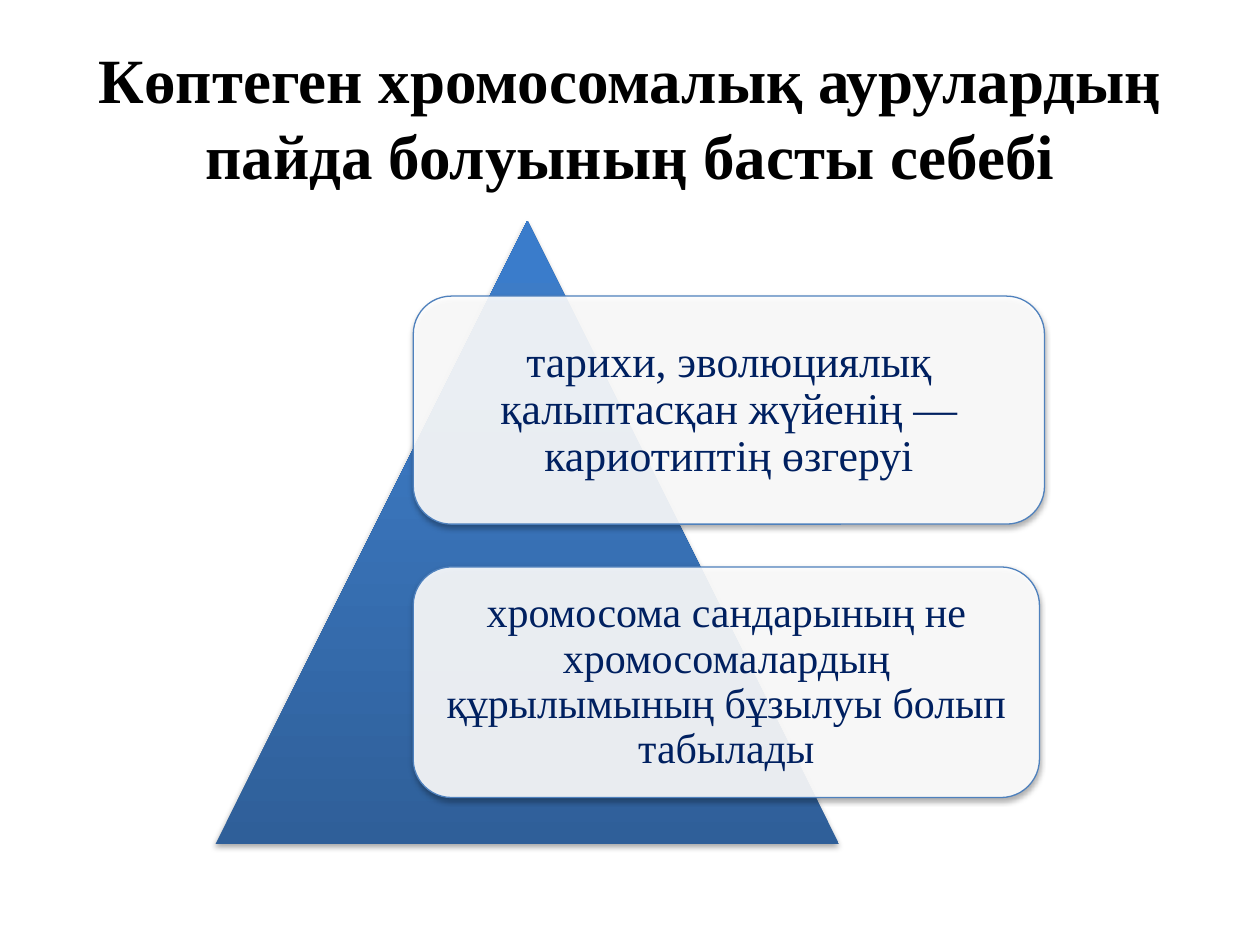
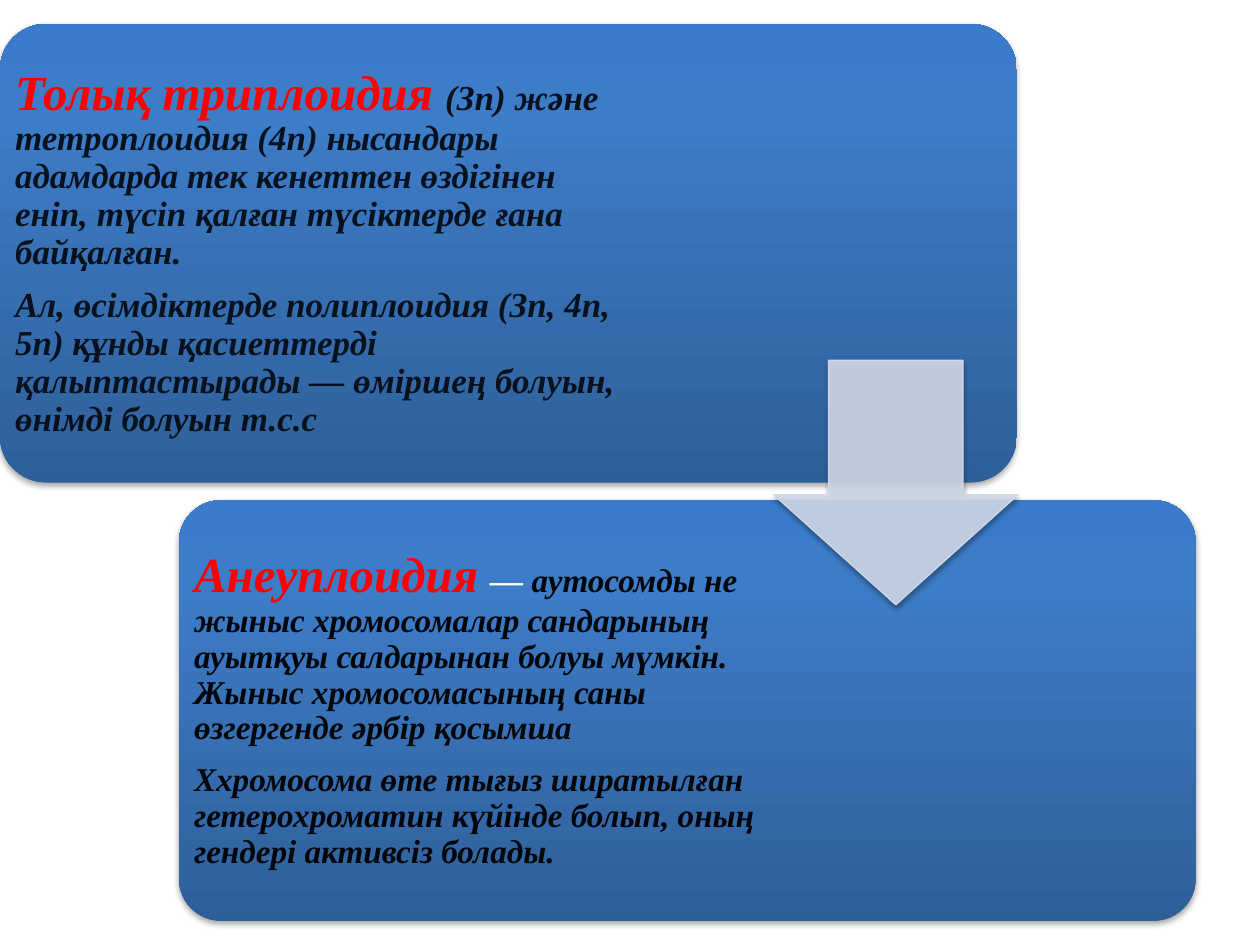
from lxml.etree import SubElement
from pptx import Presentation
from pptx.dml.color import RGBColor as Rgb
from pptx.enum.shapes import MSO_SHAPE as Shape
from pptx.enum.text import MSO_ANCHOR as Anchor, MSO_AUTO_SIZE as AutoSize, PP_ALIGN as Align
from pptx.oxml.ns import qn
from pptx.util import Pt

SCALE = 9144
FONT = "Times New Roman"
COLORS = {
    "title": "000000",
    "white": "FFFFFF",
    "outline": "4F81BD",
    "navy": "002060",
    "term": "FF0000",
    "dark": "08121F",
    "darker": "03070C",
    "arrow": "D0D8E8",
    "shadow": "000000",
}
BLUE_STOPS = ((0, "2F5F99"), (80, "3D7CC7"), (100, "3A7CCB"))


def px(*lengths):
    """Turn px lengths, 100 to the inch, into EMU."""
    return [length * SCALE for length in lengths]


def color(name):
    """Return the named colour as an RGB value."""
    return Rgb.from_string(COLORS[name])


def add_color(parent, value, alpha=None):
    """Append a colour element, with its opacity in percent, to a parent."""
    node = SubElement(parent, qn("a:srgbClr"), val=value)
    if alpha is not None:
        SubElement(node, qn("a:alpha"), val=str(alpha * 1000))


def fill_gradient(shape):
    """Fill a shape with the shared blue gradient, dark at the bottom."""
    shape.fill.gradient()
    shape.fill.gradient_angle = 90
    stops = shape._element.spPr.find(qn("a:gradFill")).find(qn("a:gsLst"))
    for stop in list(stops):
        stops.remove(stop)
    for position, value in BLUE_STOPS:
        add_color(SubElement(stops, qn("a:gs"), pos=str(position * 1000)), value)


def fill_translucent(shape, name):
    """Fill a shape with a named colour at 90 percent opacity."""
    shape.fill.solid()
    shape.fill.fore_color.rgb = color(name)
    solid = shape._element.spPr.find(qn("a:solidFill"))
    SubElement(solid.find(qn("a:srgbClr")), qn("a:alpha"), val="90000")


def add_shadow(shape):
    """Give a shape the shared soft shadow below it."""
    shape.shadow.inherit = False
    effects = shape._element.spPr.find(qn("a:effectLst"))
    outer = SubElement(effects, qn("a:outerShdw"), blurRad="40000", dist="23000",
                       dir="5400000", rotWithShape="0")
    add_color(outer, COLORS["shadow"], 35)


def add_figure(page, kind, frame, fill=None, line=None, adjust=()):
    """Add a shadowed preset shape, blue gradient unless a fill is named."""
    shape = page.shapes.add_shape(kind, *px(*frame))
    for index, value in enumerate(adjust):
        shape.adjustments[index] = value
    if fill:
        fill_translucent(shape, fill)
    else:
        fill_gradient(shape)
    if line:
        shape.line.color.rgb = color(line)
        shape.line.width = Pt(0.75)
    else:
        shape.line.fill.background()
    add_shadow(shape)


def add_span(para, text, *, size, ink, bold=False, italic=False):
    """Add a formatted run of text to a paragraph."""
    span = para.add_run()
    span.text = text
    span.font.name = FONT
    span.font.size = Pt(size)
    span.font.color.rgb = color(ink)
    span.font.bold = bold
    span.font.italic = italic


def add_text(page, frame, paragraphs, *, inset, align=Align.LEFT, **style):
    """Add a middle-anchored box; each paragraph lists (text, size, ink) spans."""
    box = page.shapes.add_textbox(*px(*frame)).text_frame
    box.word_wrap = True
    box.vertical_anchor = Anchor.MIDDLE
    box.margin_left, box.margin_top, box.margin_right, box.margin_bottom = px(*[inset] * 4)
    for index, spans in enumerate(paragraphs):
        para = box.paragraphs[0] if index == 0 else box.add_paragraph()
        para.alignment = align
        para.line_spacing = 0.9
        para.space_after = Pt(9)
        for text, size, ink in spans:
            add_span(para, text, size=size, ink=ink, **style)


def add_title(page, text):
    """Place and format the title placeholder."""
    title = page.shapes.title
    title.left, title.top, title.width, title.height = px(50, 30, 900, 125)
    frame = title.text_frame
    frame.auto_size = AutoSize.NONE
    frame.vertical_anchor = Anchor.MIDDLE
    para = frame.paragraphs[0]
    para.alignment = Align.CENTER
    add_span(para, text, size=36, ink="title", bold=True)


def add_cause(page, frame, text, size):
    """Add a white rounded card with one centred cause."""
    add_figure(page, Shape.ROUNDED_RECTANGLE, frame, fill="white", line="outline")
    add_text(page, frame, [[(text, size, "navy")]], inset=10, align=Align.CENTER)


def add_ploidy(page, frame, text_width, paragraphs):
    """Add a blue rounded panel with its text on the left part."""
    left, top, _, height = frame
    add_figure(page, Shape.ROUNDED_RECTANGLE, frame, adjust=(0.1,))
    add_text(page, (left, top, text_width, height), paragraphs, inset=12,
             bold=True, italic=True)


def build_causes(deck):
    """Build the slide with the pyramid of causes."""
    page = deck.slides.add_slide(deck.slide_layouts[5])
    add_title(page, "Көптеген хромосомалық аурулардың пайда болуының басты себебі")
    add_figure(page, Shape.ISOSCELES_TRIANGLE, (171, 175, 495, 495))
    add_cause(page, (328, 235, 501, 181),
              "тарихи, эволюциялық қалыптасқан жүйенің — кариотиптің өзгеруі", 25)
    add_cause(page, (328, 450, 497, 183),
              "хромосома сандарының не хромосомалардың құрылымының бұзылуы болып табылады", 24)


def build_ploidies(deck):
    """Build the slide with the two linked panels."""
    page = deck.slides.add_slide(deck.slide_layouts[6])
    add_ploidy(page, (0, 19, 807, 364), 517, [
        [("Толық триплоидия ", 28, "term"),
         ("(Зп) және тетроплоидия (4п) нысандары адамдарда тек кенеттен өздігінен "
          "еніп, түсіп қалған түсіктерде ғана байқалған.", 20, "dark")],
        [("Ал, өсімдіктерде полиплоидия (Зп, 4п, 5п) құнды қасиеттерді "
          "қалыптастырады — өміршең болуын, өнімді болуын т.с.с", 20, "dark")],
    ])
    add_ploidy(page, (142, 397, 807, 334), 471, [
        [("Анеуплоидия ", 28, "term"),
         ("— ", 19, "white"),
         ("аутосомды не жыныс хромосомалар сандарының ауытқуы салдарынан болуы "
          "мүмкін. Жыныс хромосомасының саны өзгергенде әрбір қосымша", 19, "darker")],
        [("Ххромосома өте тығыз ширатылған гетерохроматин күйінде болып, оның "
          "гендері активсіз болады.", 19, "darker")],
    ])
    add_figure(page, Shape.DOWN_ARROW, (614, 286, 194, 194), fill="arrow", line="arrow",
               adjust=(0.55, 0.45))


def main():
    """Build and save the deck."""
    deck = Presentation()
    deck.slide_width, deck.slide_height = px(1000, 750)
    build_causes(deck)
    build_ploidies(deck)
    deck.save("out.pptx")


if __name__ == "__main__":
    main()
